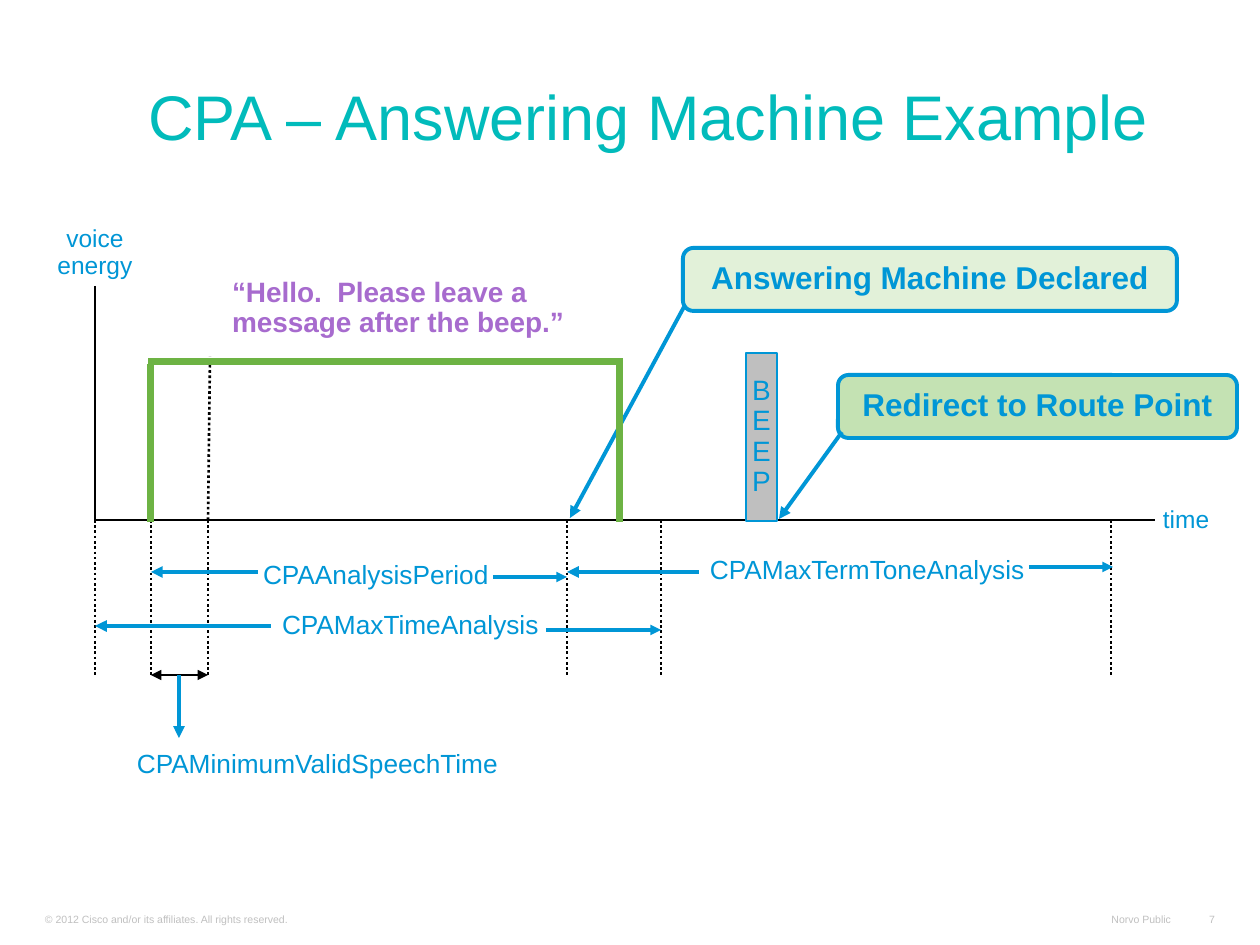
from dataclasses import dataclass

from lxml.etree import SubElement
from pptx import Presentation
from pptx.dml.color import RGBColor
from pptx.enum.dml import MSO_LINE
from pptx.enum.shapes import MSO_CONNECTOR as CONN, MSO_SHAPE
from pptx.enum.text import MSO_ANCHOR as ANCHOR, MSO_AUTO_SIZE as AUTO, PP_ALIGN as ALIGN
from pptx.oxml.ns import qn
from pptx.util import Pt

PX = 914400 / 126


@dataclass(frozen=True)
class Theme:
    font: str = "Arial"
    title: str = "01BBBB"
    accent: str = "0096D6"
    axis: str = "000000"
    voice: str = "6DB344"
    quote: str = "A76BCE"
    beep: str = "BFBFBF"
    declared: str = "E2F1D9"
    redirect: str = "C4E2B3"
    footer: str = "C0C0C0"
    title_size: int = 36
    callout_size: int = 18
    speech_size: int = 16
    label_size: int = 15
    axis_size: int = 14
    footer_size: int = 6
    thin: float = 1.5
    arrow: float = 2.25
    bent: float = 2
    thick: float = 4


T = Theme()


@dataclass(frozen=True)
class Box:
    x: int
    y: int
    w: int
    h: int

    def inner(self, x, y, w, h):
        return Box(self.x + x, self.y + y, w, h)

    def emu(self):
        return [px(v) for v in (self.x, self.y, self.w, self.h)]


def px(value):
    return round(value * PX)


def rgb(colour):
    return RGBColor.from_string(colour)


def write(sp, lines, size, colour, align=ALIGN.LEFT, anchor=ANCHOR.TOP,
          bold=False, wrap=False, grow=False, spacing=0.9):
    tf = sp.text_frame
    tf.word_wrap = wrap
    tf.auto_size = AUTO.SHAPE_TO_FIT_TEXT if grow else AUTO.NONE
    tf.vertical_anchor = anchor
    tf.margin_left = tf.margin_right = px(11)
    tf.margin_top = tf.margin_bottom = px(5)
    for i, line in enumerate(lines):
        p = tf.add_paragraph() if i else tf.paragraphs[0]
        p.alignment = align
        p.line_spacing = spacing
        r = p.add_run()
        r.text = line
        r.font.name = T.font
        r.font.size = Pt(size)
        r.font.bold = bold
        r.font.color.rgb = rgb(colour)


def add_text(s, box, lines, size, colour, **style):
    write(s.shapes.add_textbox(*box.emu()), lines, size, colour, **style)


def add_block(s, box, shape, fill, width, lines, size, bold=False):
    sp = s.shapes.add_shape(shape, *box.emu())
    sp.shadow.inherit = False
    sp.fill.solid()
    sp.fill.fore_color.rgb = rgb(fill)
    sp.line.color.rgb = rgb(T.accent)
    sp.line.width = Pt(width)
    write(sp, lines, size, T.accent, ALIGN.CENTER, ANCHOR.MIDDLE, bold)


def add_line(s, box, start, end, colour=T.axis, width=T.thin, dotted=False,
             ends=(), kind=CONN.STRAIGHT):
    """Draw a line between two points of box; ends lists headEnd and tailEnd arrows."""
    (x1, y1), (x2, y2) = start, end
    c = s.shapes.add_connector(kind, px(box.x + x1), px(box.y + y1),
                               px(box.x + x2), px(box.y + y2))
    c.line.color.rgb = rgb(colour)
    c.line.width = Pt(width)
    if dotted:
        c.line.dash_style = MSO_LINE.ROUND_DOT
    ln = c.line._get_or_add_ln()
    for name in ends:
        SubElement(ln, qn(f"a:{name}"), type="triangle")
    SubElement(c._element.spPr, qn("a:effectLst"))


def add_arrow(s, box, start, end, width=T.arrow, kind=CONN.STRAIGHT):
    add_line(s, box, start, end, T.accent, width, ends=["tailEnd"], kind=kind)


def add_title(s, box, text):
    title = s.shapes.title
    title.left, title.top, title.width, title.height = box.emu()
    write(title, [text], T.title_size, T.title, anchor=ANCHOR.BOTTOM,
          wrap=True, spacing=0.8)


def add_axes(s, box):
    add_line(s, box, (0, 0), (0, box.h))
    add_line(s, box, (0, box.h), (box.w, box.h))
    for x, y, lines in ((-42, -49, ["voice", "energy"]), (1049, 219, ["time"])):
        add_text(s, box.inner(x, y, 84, 32), lines, T.axis_size, T.accent,
                 align=ALIGN.CENTER, anchor=ANCHOR.MIDDLE)


def add_measures(s, box):
    """Draw the guides under the time axis and the spans measured between them."""
    start, speech, valid, declared, limit, tone = 0, 56, 113, 472, 566, 1016
    for x in (start, speech, valid, declared, limit, tone):
        add_line(s, box, (x, 0), (x, box.h), dotted=True)
    # label, its left, top and width, then (from x, to x, y) of each arrow
    spans = (
        ("CPAAnalysisPeriod", 157, 37, 258, (163, speech, 52), (398, declared, 57)),
        ("CPAMaxTimeAnalysis", 176, 87, 282, (176, start, 106), (451, limit, 110)),
        ("CPAMaxTermToneAnalysis", 604, 32, 341, (604, declared, 52), (934, 1018, 47)),
    )
    for text, x, y, w, (x1, x2, left_y), (x3, x4, right_y) in spans:
        add_text(s, box.inner(x, y, w, 40), [text], T.label_size, T.accent, grow=True)
        add_arrow(s, box, (x1, left_y), (x2, left_y))
        add_arrow(s, box, (x3, right_y), (x4, right_y), T.bent, CONN.ELBOW)
    add_line(s, box, (speech, 155), (valid, 155), ends=["headEnd", "tailEnd"])
    middle = (speech + valid) // 2
    add_arrow(s, box, (middle, 155), (middle, 218))
    add_text(s, box.inner(15, 226, 415, 40), ["CPAMinimumValidSpeechTime"],
             T.label_size, T.accent, align=ALIGN.CENTER, wrap=True, grow=True)


def add_events(s, box):
    callouts = (
        (588, -38, 494, "Answering Machine Declared", T.declared, (589, 21), (475, 232)),
        (743, 89, 399, "Redirect to Route Point", T.redirect, (747, 146), (684, 233)),
    )
    for x, y, w, text, fill, start, end in callouts:
        add_block(s, box.inner(x, y, w, 63), MSO_SHAPE.ROUNDED_RECTANGLE, fill,
                  T.arrow, [text], T.callout_size, bold=True)
        add_arrow(s, box, start, end)
    add_block(s, box.inner(651, 67, 31, 168), MSO_SHAPE.RECTANGLE, T.beep,
              T.thin, list("BEEP"), T.speech_size)


def add_voice(s, box):
    add_line(s, box, (113, box.h), (115, 71), dotted=True)
    left, right, top = 56, 525, 76
    for start, end in (((left, 236), (left, 78)), ((right, 236), (right, 78)),
                       ((right + 3, top), (left - 3, top))):
        add_line(s, box, start, end, T.voice, T.thick)
    add_text(s, box.inner(126, -13, 359, 73),
             ["“Hello.  Please leave a", "message after the beep.”"],
             T.speech_size, T.quote, bold=True, grow=True)


def add_footer(s, box):
    notes = (
        (0, 471, "© 2012 Cisco and/or its affiliates. All rights reserved.", ALIGN.LEFT),
        (1066, 82, "Norvo Public", ALIGN.RIGHT),
        (1157, 35, "7", ALIGN.RIGHT),
    )
    for x, w, text, align in notes:
        add_text(s, box.inner(x, 0, w, box.h), [text], T.footer_size, T.footer,
                 align=align, anchor=ANCHOR.BOTTOM, wrap=align == ALIGN.LEFT,
                 grow=True, spacing=1.0)


def main():
    prs = Presentation()
    prs.slide_width, prs.slide_height = px(1260), px(945)
    s = prs.slides.add_slide(prs.slide_layouts[5])
    plot = Box(95, 286, 1060, 234)
    add_title(s, Box(137, 42, 1123, 116), "CPA – Answering Machine Example")
    add_axes(s, plot)
    add_measures(s, Box(95, 520, 1016, 156))
    add_events(s, plot)
    add_voice(s, plot)
    add_footer(s, Box(34, 907, 1192, 24))
    prs.save("out.pptx")


if __name__ == "__main__":
    main()
